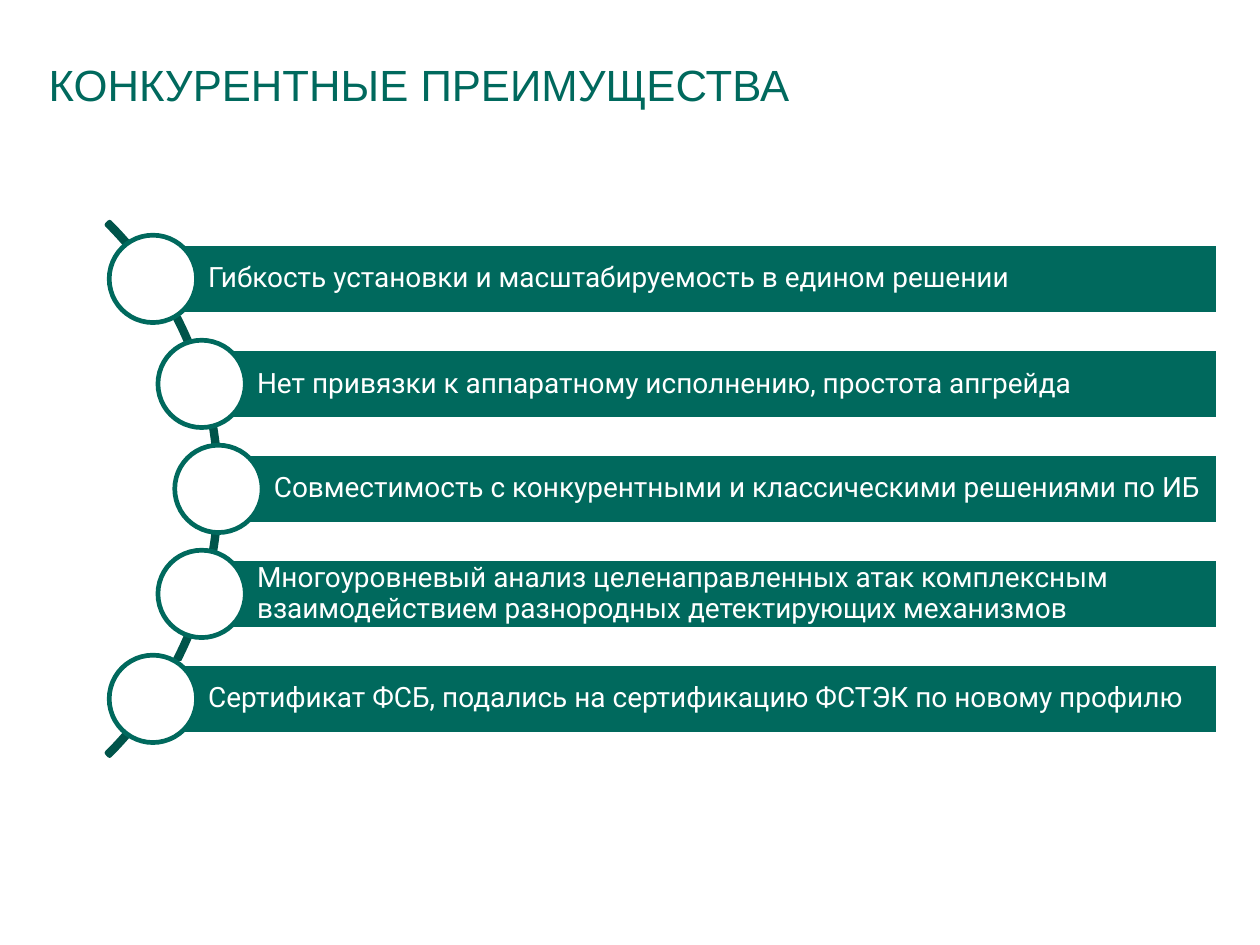
"""Build a slide of five competitive advantages along an arc."""
from pptx import Presentation
from pptx.dml.color import RGBColor
from pptx.enum import shapes, text
from pptx.util import Inches, Pt

TITLE = "КОНКУРЕНТНЫЕ ПРЕИМУЩЕСТВА"
ITEMS = [
    (0.91, "Гибкость установки и масштабируемость в едином решении"),
    (1.2, "Нет привязки к аппаратному исполнению, простота апгрейда"),
    (1.3, "Совместимость с конкурентными и классическими решениями по ИБ"),
    (1.2, "Многоуровневый анализ целенаправленных атак комплексным "
          "взаимодействием разнородных детектирующих механизмов"),
    (0.91, "Сертификат ФСБ, подались на сертификацию ФСТЭК по новому профилю"),
]
COLORS = {"green": "00695D", "dark": "00544A", "white": "FFFFFF"}
WIDTH = 7.5
HEIGHT = WIDTH * 3 / 4
RIGHT, FIRST, LAST = 7.25, 1.66, 4.16
STEP = (LAST - FIRST) / (len(ITEMS) - 1)
BAR, DOT, ARC = 0.42, 0.52, 4.49
KIND = shapes.MSO_SHAPE


def color(name):
    return RGBColor.from_string(COLORS[name])


def write(shape, words, size, font, tint, spacing, insets, anchor):
    frame = shape.text_frame
    frame.word_wrap = True
    frame.auto_size = text.MSO_AUTO_SIZE.NONE
    frame.vertical_anchor = anchor
    (frame.margin_left, frame.margin_top,
     frame.margin_right, frame.margin_bottom) = map(Inches, insets)
    para = frame.paragraphs[0]
    para.alignment = text.PP_ALIGN.LEFT
    para.line_spacing = spacing
    run = para.add_run()
    run.text = words
    run.font.size, run.font.name = Pt(size), font
    run.font.bold = False
    run.font.color.rgb = color(tint)


def draw(slide, kind, box, line, fill=None):
    shape = slide.shapes.add_shape(kind, *map(Inches, box))
    shape.shadow.inherit = False
    if fill:
        shape.fill.solid()
        shape.fill.fore_color.rgb = color(fill)
    else:
        shape.fill.background()
    shape.line.color.rgb = color(line)
    shape.line.width = Pt(2)
    return shape


def main():
    deck = Presentation()
    deck.slide_width, deck.slide_height = Inches(WIDTH), Inches(HEIGHT)
    slide = deck.slides.add_slide(deck.slide_layouts[5])

    title = slide.shapes.title
    title.left, title.top = Inches(0.29), Inches(0.35)
    title.width, title.height = Inches(6.91), Inches(0.73)
    write(title, TITLE, size=18.7, font="Arial", tint="green",
          spacing=Pt(21.9), insets=(0, 0, 0, 0), anchor=text.MSO_ANCHOR.TOP)

    middle = (FIRST + LAST) / 2
    arc = draw(slide, KIND.BLOCK_ARC, (-3.18, middle - ARC / 2, ARC, ARC), "dark")
    for i, value in enumerate((189, 27, 0.005)):
        arc.adjustments[i] = value

    for i, (x, words) in enumerate(ITEMS):
        y = FIRST + i * STEP
        bar = draw(slide, KIND.RECTANGLE, (x, y - BAR / 2, RIGHT - x, BAR),
                   "white", "green")
        write(bar, words, size=12, font="Roboto", tint="white", spacing=0.9,
              insets=(0.33, 0.03, 0.03, 0.03), anchor=text.MSO_ANCHOR.MIDDLE)
        draw(slide, KIND.OVAL, (x - DOT / 2, y - DOT / 2, DOT, DOT),
             "green", "white")

    deck.save("out.pptx")


if __name__ == "__main__":
    main()
